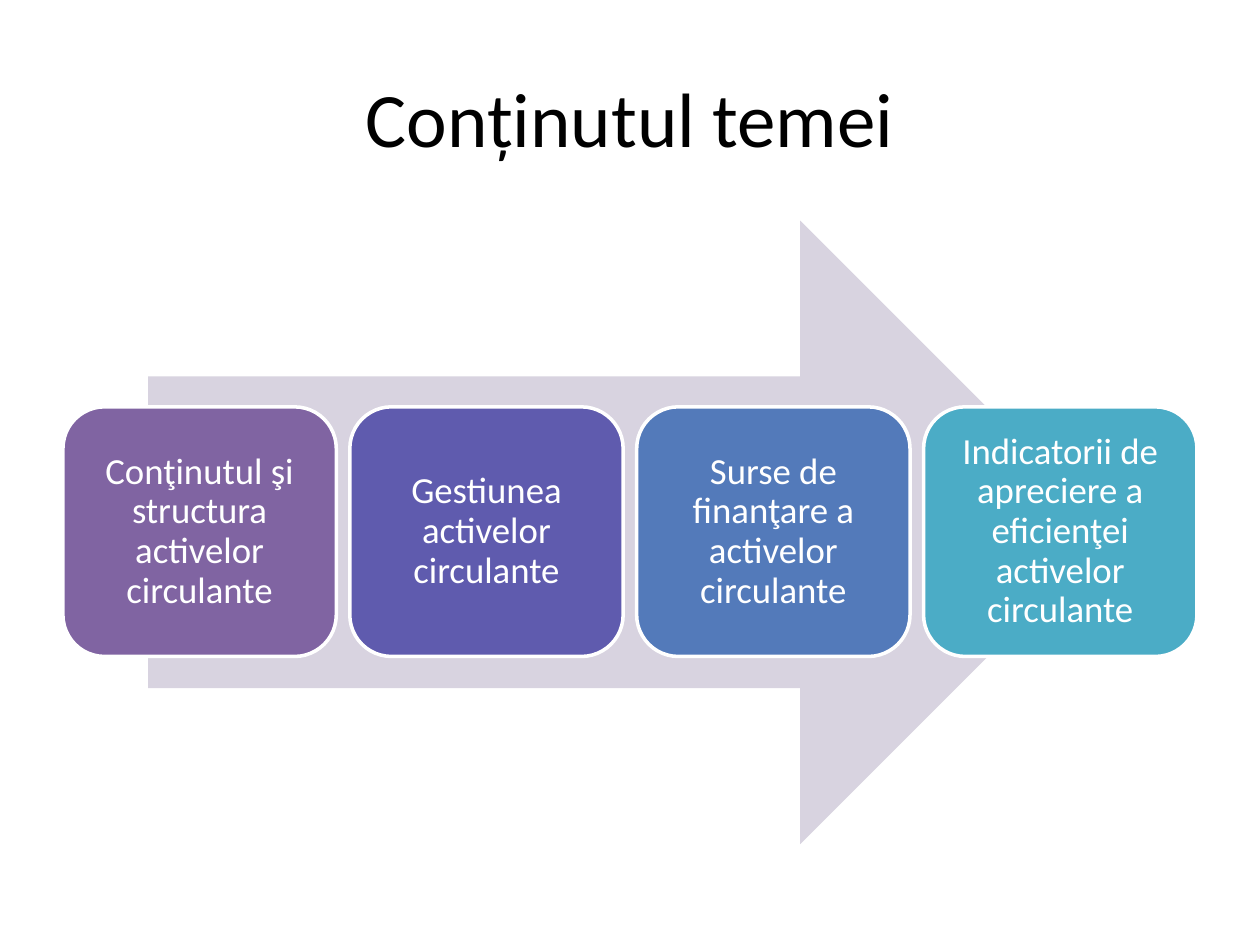
from dataclasses import dataclass

from pptx import Presentation
from pptx.dml.color import RGBColor
from pptx.enum.shapes import MSO_SHAPE
from pptx.enum.text import MSO_ANCHOR, PP_ALIGN
from pptx.util import Pt

RIGHT_ARROW = MSO_SHAPE.RIGHT_ARROW
ROUNDED = MSO_SHAPE.ROUNDED_RECTANGLE
MIDDLE = MSO_ANCHOR.MIDDLE
CENTER = PP_ALIGN.CENTER

BLACK = RGBColor(0x00, 0x00, 0x00)
WHITE = RGBColor(0xFF, 0xFF, 0xFF)
LAVENDER = RGBColor(0xD8, 0xD3, 0xE0)
PURPLE = RGBColor(0x80, 0x64, 0xA2)
INDIGO = RGBColor(0x5F, 0x5B, 0xAE)
BLUE = RGBColor(0x53, 0x7A, 0xBA)
TEAL = RGBColor(0x4B, 0xAC, 0xC6)

FONT = "Calibri"
SLIDE_WIDTH, SLIDE_HEIGHT = 720, 540
MARGIN = 36
STEP_TOP, STEP_WIDTH, STEP_HEIGHT = 232.5, 156.2, 142.6
INSET = 6.5


@dataclass(frozen=True)
class Step:
    text: str
    color: RGBColor


STEPS = (
    Step("Conţinutul şi structura activelor circulante", PURPLE),
    Step("Gestiunea activelor circulante", INDIGO),
    Step("Surse de finanţare a activelor circulante", BLUE),
    Step("Indicatorii de apreciere a eficienţei activelor circulante", TEAL),
)


def write_centered(box, text: str, size: float, color: RGBColor):
    frame = box.text_frame
    frame.word_wrap = True
    frame.vertical_anchor = MIDDLE
    para = frame.paragraphs[0]
    para.alignment = CENTER
    span = para.add_run()
    span.text = text
    span.font.name = FONT
    span.font.size = Pt(size)
    span.font.color.rgb = color
    return para


def add_title(page, text: str) -> None:
    title = page.shapes.title
    title.left, title.top = Pt(MARGIN), Pt(21.6)
    title.width, title.height = Pt(SLIDE_WIDTH - 2 * MARGIN), Pt(90)
    write_centered(title, text, 44, BLACK)


def add_arrow(page) -> None:
    arrow = page.shapes.add_shape(
        RIGHT_ARROW, Pt(84.6), Pt(126), Pt(550.8), Pt(356.4))
    arrow.shadow.inherit = False
    arrow.fill.solid()
    arrow.fill.fore_color.rgb = LAVENDER
    arrow.line.fill.background()


def add_step(page, step: Step, left: float) -> None:
    box = page.shapes.add_shape(
        ROUNDED, Pt(left), Pt(STEP_TOP), Pt(STEP_WIDTH), Pt(STEP_HEIGHT))
    box.shadow.inherit = False
    box.fill.solid()
    box.fill.fore_color.rgb = step.color
    box.line.color.rgb = WHITE
    box.line.width = Pt(2)
    frame = box.text_frame
    frame.margin_left = frame.margin_right = Pt(INSET)
    frame.margin_top = frame.margin_bottom = Pt(INSET)
    para = write_centered(box, step.text, 21, WHITE)
    para.line_spacing = 0.9


def main() -> None:
    deck = Presentation()
    deck.slide_width, deck.slide_height = Pt(SLIDE_WIDTH), Pt(SLIDE_HEIGHT)
    page = deck.slides.add_slide(deck.slide_layouts[5])
    add_title(page, "Conținutul temei")
    add_arrow(page)
    pitch = (SLIDE_WIDTH - 2 * MARGIN - STEP_WIDTH) / (len(STEPS) - 1)
    for index, step in enumerate(STEPS):
        add_step(page, step, MARGIN + index * pitch)
    deck.save("out.pptx")


if __name__ == "__main__":
    main()
